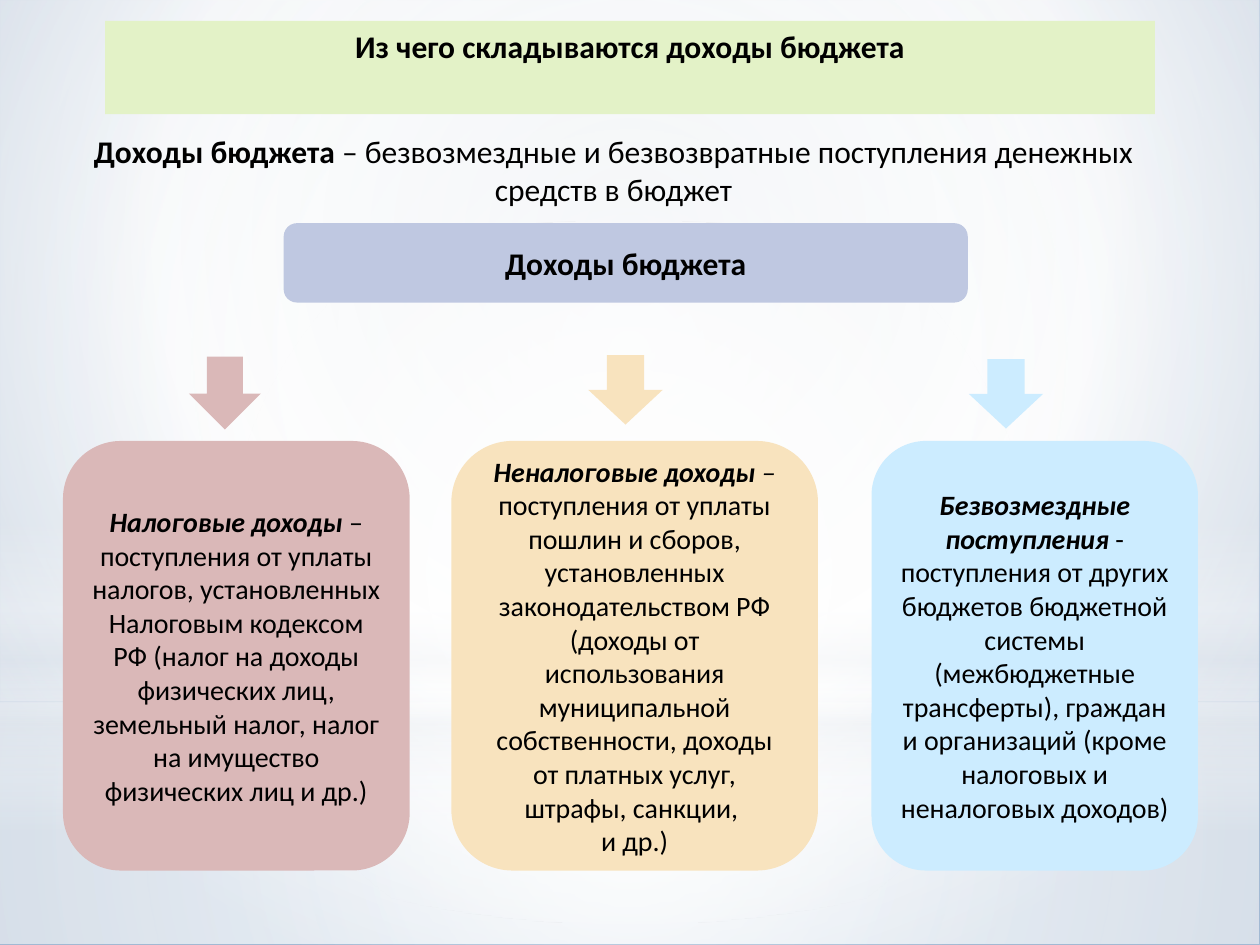
from lxml.etree import SubElement
from pptx import Presentation
from pptx.dml.color import RGBColor
from pptx.enum.shapes import MSO_SHAPE
from pptx.enum.text import MSO_ANCHOR, MSO_AUTO_SIZE, PP_ALIGN
from pptx.oxml.ns import qn
from pptx.util import Cm, Pt

COLORS = {
    "text": "000000", "white": "FFFFFF", "mist": "E4E9EF",
    "bg_core": "D7DFE7", "bg_edge": "A2B9D3",
    "title": "E3F2C7", "total": "BFC8E1",
    "tax": "DAB8B8", "nontax": "F8E3BE", "grants": "CCECFF",
}
BOLD, BOLD_ITALIC, ITALIC, PLAIN = (True, False), (True, True), (False, True), (False, False)


class Deck:
    """Holds the text style and the current slide."""
    font = "Calibri"

    def __init__(self, width, height):
        self.prs = Presentation()
        self.prs.slide_width, self.prs.slide_height = Cm(width), Cm(height)
        self.s = self.prs.slides.add_slide(self.prs.slide_layouts[5])

    def gradient(self, fill, root, stops, center=None, angle=0):
        """Fill with (position, colour, opacity) stops, radial if center is given."""
        fill.gradient()
        grad = root.find(".//" + qn("a:gradFill"))
        for child in list(grad):
            grad.remove(child)
        gs_list = SubElement(grad, qn("a:gsLst"))
        for pos, color, alpha in stops:
            gs = SubElement(gs_list, qn("a:gs"), pos=str(pos * 1000))
            clr = SubElement(gs, qn("a:srgbClr"), val=COLORS[color])
            if alpha < 100:
                SubElement(clr, qn("a:alpha"), val=str(alpha * 1000))
        if center:
            radial = SubElement(grad, qn("a:path"), path="circle")
            sides = {k: str(v * 1000) for k, v in zip("ltrb", center)}
            SubElement(radial, qn("a:fillToRect"), **sides)
        else:
            SubElement(grad, qn("a:lin"), ang=str(angle * 60000), scaled="0")

    def background(self, stops, center):
        self.gradient(self.s.background.fill, self.s.element, stops, center)

    def shape(self, kind, box, color=None):
        sp = self.s.shapes.add_shape(kind, *map(Cm, box))
        sp.shadow.inherit = False
        sp.line.fill.background()
        if color:
            self.solid(sp, color)
        return sp

    def solid(self, sp, color):
        sp.fill.solid()
        sp.fill.fore_color.rgb = RGBColor.from_string(COLORS[color])

    def glow(self, kind, box, stops, **direction):
        sp = self.shape(kind, box)
        self.gradient(sp.fill, sp.element, stops, **direction)

    def add_text(self, sp, paragraphs, size=18, anchor=MSO_ANCHOR.MIDDLE):
        tf = sp.text_frame
        tf.word_wrap = True
        tf.auto_size = MSO_AUTO_SIZE.NONE
        tf.vertical_anchor = anchor
        for i, runs in enumerate(paragraphs):
            p = tf.add_paragraph() if i else tf.paragraphs[0]
            p.alignment = PP_ALIGN.CENTER
            for text, (bold, italic) in runs:
                r = p.add_run()
                r.text = text
                r.font.name, r.font.size = self.font, Pt(size)
                r.font.bold, r.font.italic = bold, italic
                r.font.color.rgb = RGBColor.from_string(COLORS["text"])

    def title(self, text, box, color):
        sp = self.s.shapes.title
        sp.left, sp.top, sp.width, sp.height = map(Cm, box)
        geom = SubElement(sp.element.spPr, qn("a:prstGeom"), prst="roundRect")
        SubElement(geom, qn("a:avLst"))
        self.solid(sp, color)
        self.add_text(sp, [[(text, BOLD)]], anchor=MSO_ANCHOR.TOP)
        self.s.shapes.element.append(sp.element)  # bring above the glows

    def text(self, paragraphs, box):
        sp = self.s.shapes.add_textbox(*map(Cm, box))
        self.add_text(sp, paragraphs, anchor=MSO_ANCHOR.TOP)

    def card(self, paragraphs, box, color, size=18):
        self.add_text(self.shape(MSO_SHAPE.ROUNDED_RECTANGLE, box, color), paragraphs, size)


def main():
    deck = Deck(25.4, 19.05)
    middle = (50, 50, 50, 50)
    deck.background([(0, "bg_core", 100), (60, "white", 100), (100, "bg_edge", 100)],
                    (50, 25, 50, 75))
    deck.glow(MSO_SHAPE.RECTANGLE, (0, 14.17, 25.37, 4.85),
              [(0, "white", 91), (37, "white", 76), (100, "mist", 79)], center=middle)
    deck.glow(MSO_SHAPE.RECTANGLE, (0, 0, 25.37, 14.17),
              [(0, "white", 89), (48, "white", 62), (100, "mist", 79)], center=middle)
    deck.glow(MSO_SHAPE.RECTANGLE, (0, 10.46, 25.37, 6.32),
              [(0, "white", 0), (29, "white", 30), (45, "mist", 40),
               (55, "white", 26), (65, "mist", 60), (100, "white", 0)], angle=90)
    deck.glow(MSO_SHAPE.OVAL, (0, 4.45, 25.37, 14.17),
              [(0, "white", 100), (56, "white", 0)], center=middle)

    deck.title("Из чего складываются доходы бюджета", (2.12, 0.42, 21.16, 1.88), "title")
    deck.text([[("Доходы бюджета ", BOLD),
                ("– безвозмездные и безвозвратные поступления денежных средств в бюджет", PLAIN)]],
              (0.84, 2.54, 23.06, 1.78))
    deck.card([[("Доходы бюджета", BOLD)]], (5.72, 4.5, 13.79, 1.6), "total")

    # colour, arrow box, card left, card width, paragraphs
    sources = [
        ("tax", (3.81, 7.19, 1.45, 1.47), 1.27, 6.99, [[
            ("Налоговые доходы ", BOLD_ITALIC),
            ("– поступления от уплаты налогов, установленных Налоговым кодексом РФ "
             "(налог на доходы физических лиц, земельный налог, налог на имущество "
             "физических лиц и др.)", PLAIN)]]),
        ("nontax", (11.86, 7.16, 1.5, 1.4), 9.1, 7.39, [[
            ("Неналоговые доходы ", BOLD_ITALIC),
            ("–", ITALIC),
            (" поступления от уплаты пошлин и сборов, установленных законодательством РФ "
             "(доходы от использования муниципальной собственности, доходы от платных "
             "услуг, штрафы, санкции, ", PLAIN)],
            [("и др.)", PLAIN)]]),
        ("grants", (19.53, 7.24, 1.5, 1.4), 17.57, 6.58, [[
            ("Безвозмездные поступления ", BOLD_ITALIC),
            ("- поступления от других бюджетов бюджетной системы (межбюджетные "
             "трансферты), граждан и организаций (кроме налоговых и неналоговых "
             "доходов)", PLAIN)]]),
    ]
    for color, arrow, left, width, paragraphs in sources:
        deck.shape(MSO_SHAPE.DOWN_ARROW, arrow, color)
        deck.card(paragraphs, (left, 8.89, width, 8.66), color, size=16)

    deck.prs.save("out.pptx")


if __name__ == "__main__":
    main()
